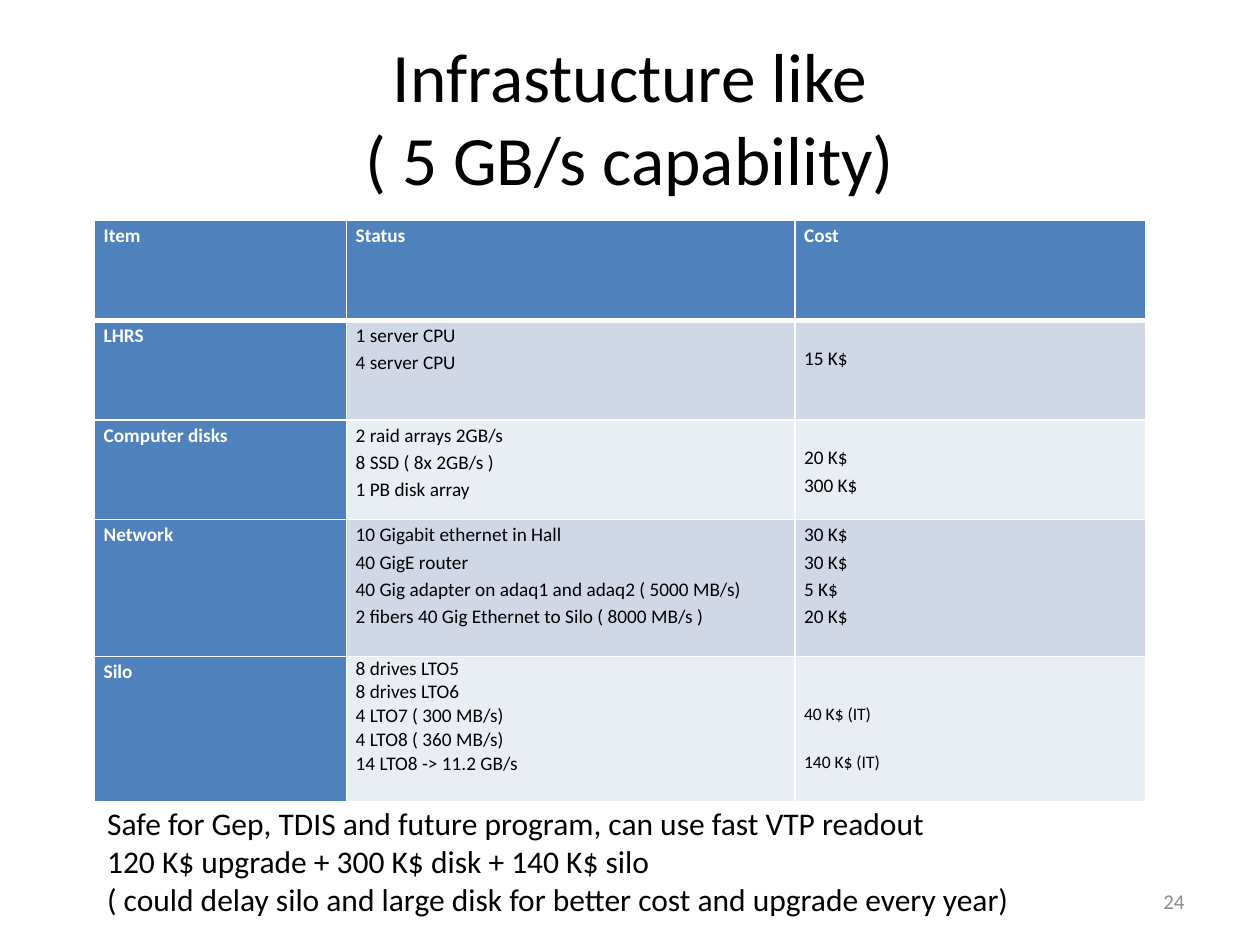
from lxml.etree import SubElement
from pptx import Presentation
from pptx.dml.color import RGBColor
from pptx.enum.text import MSO_ANCHOR, MSO_AUTO_SIZE, PP_ALIGN
from pptx.oxml.ns import qn
from pptx.util import Cm, Pt

WHITE, BLACK, GREY = "FFFFFF", "000000", "8C8C8C"
ACCENT, BANDS = "4F81BD", ("D0D8E8", "E9EDF4")

HEADINGS = ("Item", "Status", "Cost")
INFRASTRUCTURE = [
    ("LHRS", ["1 server CPU", "4 server CPU"], ["15 K$"]),
    ("Computer disks",
     ["2 raid arrays 2GB/s", "8 SSD ( 8x 2GB/s )", "1 PB disk array"],
     ["20 K$", "300 K$"]),
    ("Network",
     ["10 Gigabit ethernet in Hall", "40 GigE router",
      "40 Gig adapter on adaq1 and adaq2 ( 5000 MB/s)",
      "2 fibers 40 Gig Ethernet to Silo ( 8000 MB/s )"],
     ["30 K$", "30 K$", "5 K$", "20 K$"]),
    ("Silo",
     ["8 drives LTO5", "8 drives LTO6", "4 LTO7 ( 300 MB/s)",
      "4 LTO8 ( 360 MB/s)", "14 LTO8 -> 11.2 GB/s"],
     ["40 K$ (IT)", "140 K$ (IT)"]),
]
COLUMN_WIDTHS = (5.08, 9.04, 7.06)
ROW_HEIGHTS = (2.01, 2.01, 2.01, 2.76, 2.92)
COST_OFFSETS = (0.46, 0.46, 0, 0.89)  # lowers each cost beside its status line
CONCLUSIONS = [
    "Safe for Gep, TDIS and future program, can use fast VTP readout",
    "120 K$ upgrade + 300 K$ disk + 140 K$ silo",
    "( could delay silo and large disk for better cost and upgrade every year)",
]


def color(hex_string):
    return RGBColor.from_string(hex_string)


def add_borders(cell, bottom_width):
    """Draw white cell edges; the fill must be set afterwards to keep XML order."""
    properties = cell._tc.get_or_add_tcPr()
    for edge in ("lnL", "lnR", "lnT", "lnB"):
        width = bottom_width if edge == "lnB" else 1
        line = SubElement(properties, qn(f"a:{edge}"), w=str(Pt(width)))
        fill = SubElement(line, qn("a:solidFill"))
        SubElement(fill, qn("a:srgbClr"), val=WHITE)


class SlideBuilder:
    font_name = "Calibri"

    def __init__(self, presentation):
        layout = presentation.slide_layouts.get_by_name("Title Only")
        self.slide = presentation.slides.add_slide(layout)

    def run(self, paragraph, words, size, hex_string=BLACK, bold=False):
        run = paragraph.add_run()
        run.text = words
        font = run.font
        font.name, font.size, font.bold = self.font_name, Pt(size), bold
        font.color.rgb = color(hex_string)

    def paragraphs(self, frame, lines, size, hex_string=BLACK, bold=False,
                   align=PP_ALIGN.LEFT, spacing=None, gap=0):
        for number, words in enumerate(lines):
            paragraph = frame.add_paragraph() if number else frame.paragraphs[0]
            paragraph.alignment = align
            paragraph.line_spacing = spacing
            if number and gap:
                paragraph.space_before = Pt(gap)
            self.run(paragraph, words, size, hex_string, bold)

    def title(self, lines, left, top, width, height):
        title = self.slide.shapes.title
        title.left, title.top = Cm(left), Cm(top)
        title.width, title.height = Cm(width), Cm(height)
        frame = title.text_frame
        frame.auto_size = MSO_AUTO_SIZE.NONE
        frame.vertical_anchor = MSO_ANCHOR.MIDDLE
        paragraph = frame.paragraphs[0]
        paragraph.alignment = PP_ALIGN.CENTER
        for number, words in enumerate(lines):
            if number:
                paragraph.add_line_break()
            self.run(paragraph, words, 39.6)

    def text(self, lines, left, top, width, height, size,
             anchor=MSO_ANCHOR.TOP, **style):
        box = self.slide.shapes.add_textbox(
            Cm(left), Cm(top), Cm(width), Cm(height))
        frame = box.text_frame
        frame.word_wrap = True
        frame.vertical_anchor = anchor
        self.paragraphs(frame, lines, size, **style)

    def cell(self, cell, lines, fill, bottom_width=1, offset=0, size=11, **style):
        cell.margin_left = cell.margin_right = Cm(0.18)
        cell.margin_top, cell.margin_bottom = Cm(offset), 0
        add_borders(cell, bottom_width)
        cell.fill.solid()
        cell.fill.fore_color.rgb = color(fill)
        self.paragraphs(cell.text_frame, lines, size, **style)

    def cost_table(self, left, top):
        table = self.slide.shapes.add_table(
            len(ROW_HEIGHTS), len(COLUMN_WIDTHS), Cm(left), Cm(top),
            Cm(sum(COLUMN_WIDTHS)), Cm(sum(ROW_HEIGHTS))).table
        for column, width in zip(table.columns, COLUMN_WIDTHS):
            column.width = Cm(width)
        for row, height in zip(table.rows, ROW_HEIGHTS):
            row.height = Cm(height)

        heading_style = dict(hex_string=WHITE, bold=True, spacing=1.15)
        for column, heading in enumerate(HEADINGS):
            self.cell(table.cell(0, column), [heading], ACCENT,
                      bottom_width=3, **heading_style)
        rows = zip(INFRASTRUCTURE, COST_OFFSETS)
        for row, ((item, status, cost), offset) in enumerate(rows, start=1):
            band = BANDS[(row - 1) % 2]
            is_silo = item == "Silo"
            self.cell(table.cell(row, 0), [item], ACCENT, **heading_style)
            self.cell(table.cell(row, 1), status, band,
                      spacing=1 if is_silo else 1.15)
            self.cell(table.cell(row, 2), cost, band, offset=offset,
                      size=10 if is_silo else 11, spacing=1.15,
                      gap=13.5 if is_silo else 0)


def main():
    presentation = Presentation()
    presentation.slide_width, presentation.slide_height = Cm(25.4), Cm(19.05)
    builder = SlideBuilder(presentation)
    builder.title(["Infrastucture like", "( 5 GB/s capability)"],
                  1.27, 0.76, 22.86, 3.18)
    builder.cost_table(1.91, 4.45)
    builder.text(["24"], 18.2, 17.66, 5.93, 1.01, 12, anchor=MSO_ANCHOR.MIDDLE,
                 hex_string=GREY, align=PP_ALIGN.RIGHT)
    builder.text(CONCLUSIONS, 1.91, 16.09, 21.8, 2.56, 18)
    presentation.save("out.pptx")


if __name__ == "__main__":
    main()
